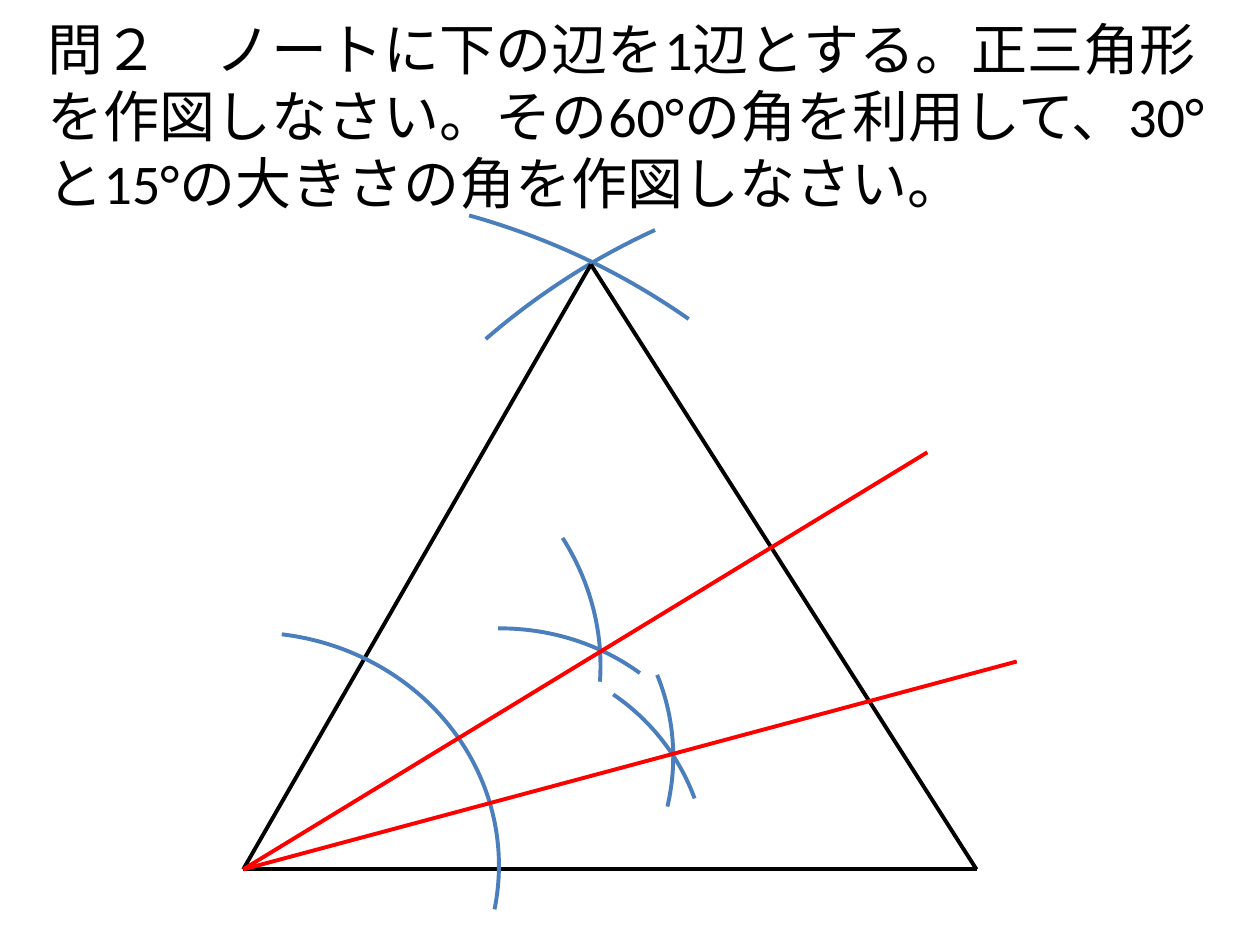
"""Build a geometry slide that constructs 60°, 30° and 15° angles."""
from lxml import etree
from pptx import Presentation
from pptx.dml.color import RGBColor
from pptx.enum.shapes import MSO_CONNECTOR, MSO_SHAPE
from pptx.enum.text import MSO_ANCHOR, PP_ALIGN
from pptx.oxml.ns import qn
from pptx.util import Pt

ARC = MSO_SHAPE.ARC
STRAIGHT = MSO_CONNECTOR.STRAIGHT
MIDDLE = MSO_ANCHOR.MIDDLE
LEFT = PP_ALIGN.LEFT

COLORS = {"text": "000000", "triangle": "000000", "arc": "4B7EBC", "ray": "FF0000"}
LINE_WIDTH = 2.25
QUESTION = (
    "問２　ノートに下の辺を1辺とする。正三角形を作図しなさい。"
    "その60°の角を利用して、30°と15°の大きさの角を作図しなさい。"
)
QUESTION_BOX = (20.16, 20.88, 697.68, 90)

VERTEX, RIGHT_CORNER, APEX = (138.96, 496.8), (558, 496.8), (337.68, 151.2)
TRIANGLE = [(VERTEX, RIGHT_CORNER), (APEX, RIGHT_CORNER), (APEX, VERTEX)]
RAY_30_END, RAY_15_END = (529.92, 258.48), (581.04, 378)

MEDIUM, SMALL = (283.68, 266.4), (245.52, 246.96)
SHORT_SWEEP = (303.78, 339.49)
APEX_ARCS = [
    ((-245.52, 108), (804.96, 778.32), 0, (286.54, 306.92)),
    ((141.84, 91.44), (804.96, 810.72), 270, (318.65, 335.05)),
]
ARCS_30 = [
    ((1.44, 361.44), MEDIUM, 0, (277.66, 10.18)),
    ((61.2, 240.48), MEDIUM, 27, SHORT_SWEEP),
    ((136.08, 361.44), MEDIUM, 329.1, SHORT_SWEEP),
]
ARCS_15 = [
    ((159.12, 375.84), SMALL, 0, SHORT_SWEEP),
    ((138.96, 309.6), SMALL, 33.6, SHORT_SWEEP),
]


def style_line(shape, role):
    shape.line.color.rgb = RGBColor.from_string(COLORS[role])
    shape.line.width = Pt(LINE_WIDTH)


def add_arcs(slide, arcs):
    for position, size, rotation, sweep in arcs:
        arc = slide.shapes.add_shape(ARC, *map(Pt, position + size))
        arc.shadow.inherit = False
        arc.fill.background()
        arc.rotation = rotation
        for index, degrees in enumerate(sweep):
            arc.adjustments[index] = degrees * 0.6
        style_line(arc, "arc")


def add_lines(slide, segments, role):
    for start, end in segments:
        connector = slide.shapes.add_connector(STRAIGHT, *map(Pt, start + end))
        style_line(connector, role)
        etree.SubElement(connector._element.spPr, qn("a:effectLst"))


def add_question(slide):
    text_frame = slide.shapes.add_textbox(*map(Pt, QUESTION_BOX)).text_frame
    text_frame.word_wrap = True
    text_frame.vertical_anchor = MIDDLE
    text_frame.text = QUESTION
    paragraph = text_frame.paragraphs[0]
    paragraph.alignment = LEFT
    font = paragraph.runs[0].font
    font.name = "Calibri"
    font.size = Pt(32)
    font.color.rgb = RGBColor.from_string(COLORS["text"])


def main():
    presentation = Presentation()
    presentation.slide_width, presentation.slide_height = Pt(720), Pt(540)
    slide = presentation.slides.add_slide(presentation.slide_layouts[6])
    add_arcs(slide, APEX_ARCS)
    add_question(slide)
    add_lines(slide, TRIANGLE, "triangle")
    add_arcs(slide, ARCS_30)
    add_lines(slide, [(RAY_30_END, VERTEX)], "ray")
    add_arcs(slide, ARCS_15)
    add_lines(slide, [(RAY_15_END, VERTEX)], "ray")
    presentation.save("out.pptx")


if __name__ == "__main__":
    main()
